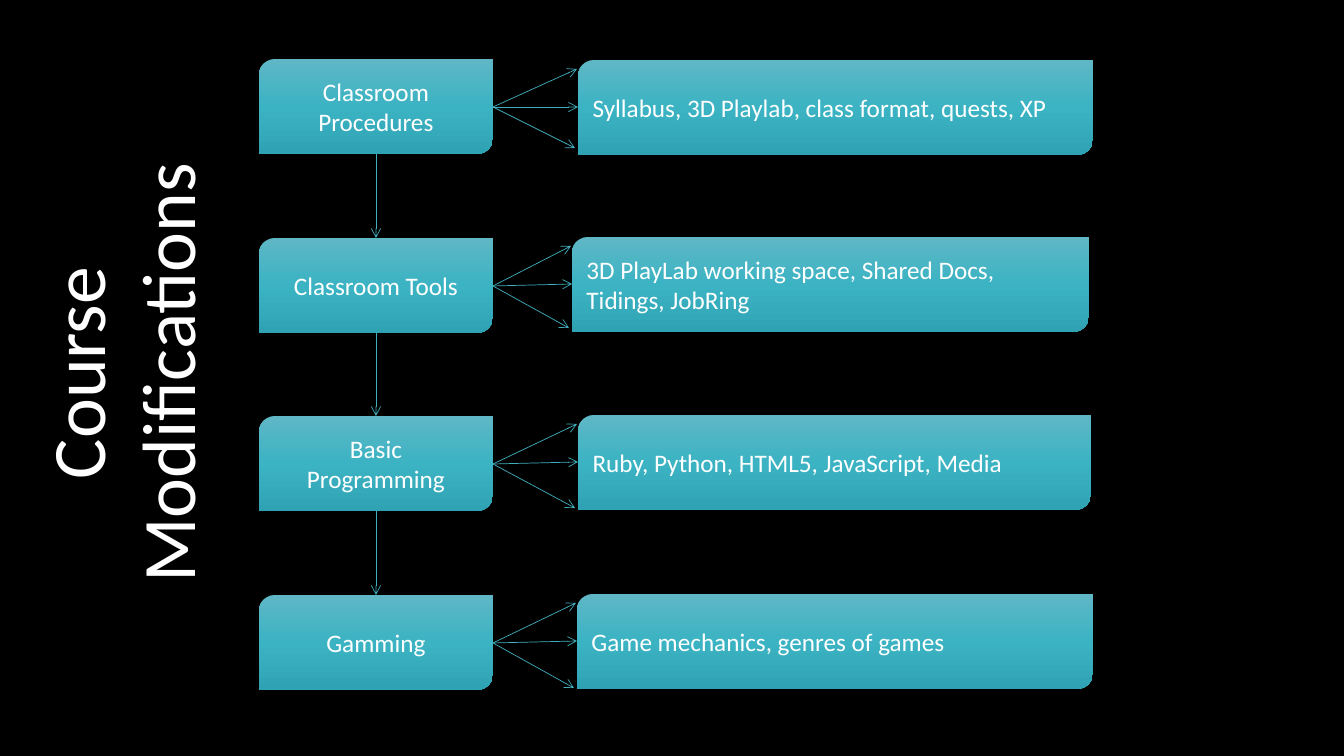
import copy

import lxml.etree
import pptx
import pptx.dml.color
import pptx.enum.shapes
import pptx.enum.text
import pptx.oxml.ns
import pptx.util

RGB = pptx.dml.color.RGBColor
ALIGN = pptx.enum.text.PP_ALIGN
BLACK = RGB(0x00, 0x00, 0x00)
WHITE = RGB(0xFF, 0xFF, 0xFF)
TEAL = RGB(0x41, 0xAE, 0xBD)
SHADES = [(0, RGB(0x5F, 0xB7, 0xC5)), (0.5, RGB(0x3B, 0xB3, 0xC3)),
          (1, RGB(0x2F, 0xA3, 0xB3))]
SCALE = 914400 / 100.8
FONT = "Calibri"
LEFT, WIDE, HIGH = 259, 234, 95
EDGE = LEFT + WIDE
MID = LEFT + WIDE // 2
ROWS = [
    (59, "Classroom Procedures", 578, 60, 515,
     "Syllabus, 3D Playlab, class format, quests, XP"),
    (238, "Classroom Tools", 572, 237, 517,
     "3D PlayLab working space, Shared Docs, Tidings, JobRing"),
    (416, "Basic\nProgramming", 578, 415, 513,
     "Ruby, Python, HTML5, JavaScript, Media"),
    (595, "Gamming", 577, 594, 516, "Game mechanics, genres of games"),
]


def px(*nums):
    return [pptx.util.Emu(round(num * SCALE)) for num in nums]


def write(frame, text, size, align):
    frame.word_wrap = True
    frame.text = text
    for para in frame.paragraphs:
        para.alignment = align
        para.font.name = FONT
        para.font.size = pptx.util.Pt(size)
        para.font.color.rgb = WHITE


def shade(fill):
    fill.gradient()
    fill.gradient_angle = 270
    stops = fill._xPr.find(".//" + pptx.oxml.ns.qn("a:gsLst"))
    stops.insert(1, copy.deepcopy(stops[0]))
    for stop, (place, color) in zip(fill.gradient_stops, SHADES):
        stop.position = place
        stop.color.rgb = color


def box(slide, x, y, wide, text, align):
    kind = pptx.enum.shapes.MSO_SHAPE.ROUND_2_DIAG_RECTANGLE
    shape = slide.shapes.add_shape(kind, *px(x, y, wide, HIGH))
    shape.shadow.inherit = False
    shape.line.fill.background()
    shade(shape.fill)
    shape.text_frame.vertical_anchor = pptx.enum.text.MSO_ANCHOR.MIDDLE
    write(shape.text_frame, text, 18, align)


def arrow(slide, x, y, to_x, to_y):
    kind = pptx.enum.shapes.MSO_CONNECTOR.STRAIGHT
    link = slide.shapes.add_connector(kind, *px(x, y, to_x, to_y))
    link.line.color.rgb = TEAL
    link.line.width = pptx.util.Pt(0.5)
    qn = pptx.oxml.ns.qn
    tail = lxml.etree.SubElement(link.line._get_or_add_ln(), qn("a:tailEnd"))
    tail.set("type", "arrow")
    lxml.etree.SubElement(link._element.spPr, qn("a:effectLst"))


def title(slide, text):
    label = slide.shapes.add_textbox(*px(-194, 276, 631, 194))
    label.rotation = 270
    write(label.text_frame, text, 54, ALIGN.CENTER)


def main():
    deck = pptx.Presentation()
    deck.slide_width, deck.slide_height = px(1344, 756)
    slide = deck.slides.add_slide(deck.slide_layouts[6])
    slide.background.fill.solid()
    slide.background.fill.fore_color.rgb = BLACK

    for i, (top, topic, x, y, wide, detail) in enumerate(ROWS):
        box(slide, LEFT, top, WIDE, topic, ALIGN.CENTER)
        box(slide, x, y, wide, detail, ALIGN.LEFT)
        for tip in [(x - 1, y + 9), (x, y + 47), (x - 3, 148 + 180 * i)]:
            arrow(slide, EDGE, top + 48, *tip)
    for row, after in zip(ROWS, ROWS[1:]):
        arrow(slide, MID, row[0] + HIGH, MID, after[0])
    title(slide, "Course Modifications")

    deck.save("out.pptx")


if __name__ == "__main__":
    main()
